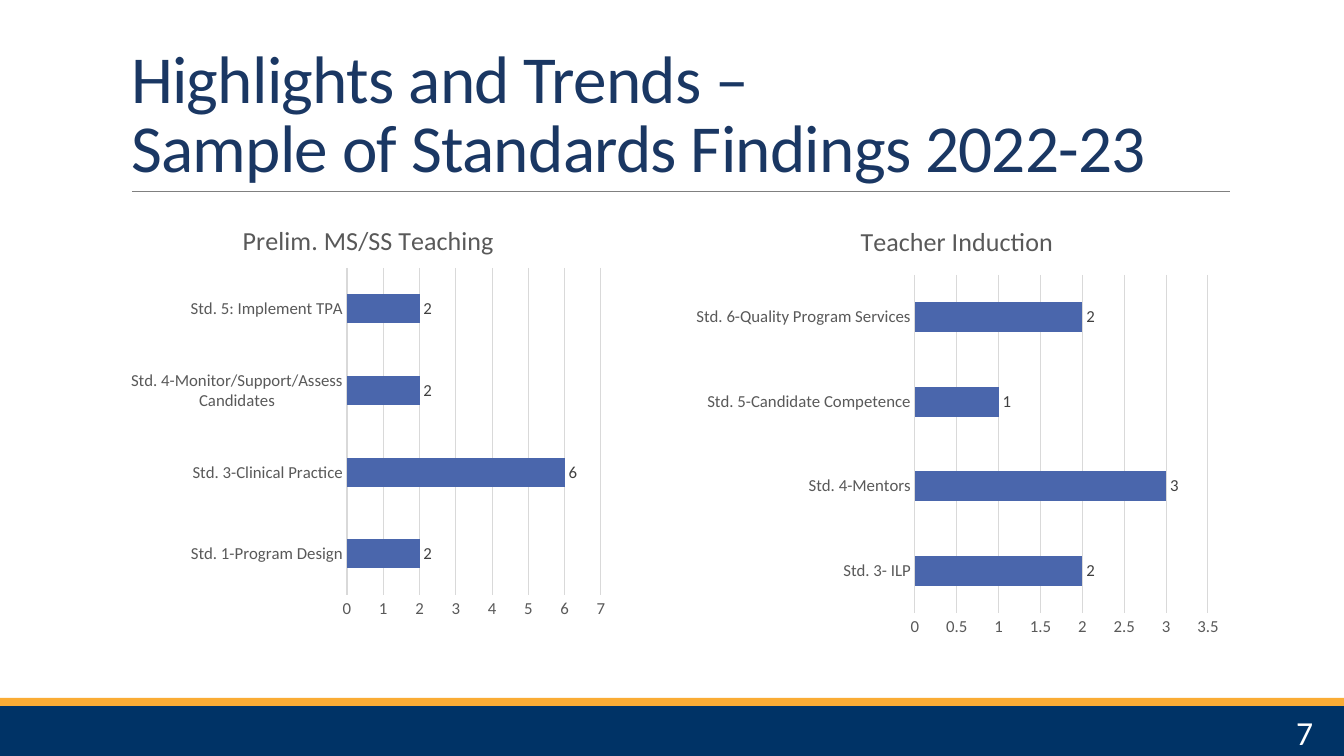
"""Build the slide on sample standards findings with two bar charts."""
from lxml import etree
from pptx import Presentation
from pptx import util as u
from pptx.chart.data import CategoryChartData
from pptx.dml.color import RGBColor
from pptx.enum import chart as ch, shapes, text
from pptx.oxml import parse_xml
from pptx.oxml.ns import nsdecls, qn

PX = 9144000 / 1008
FONT = "Calibri"
COLORS = {
    "navy": "003366", "gold": "FAAC35", "rule": "808080", "title": "1A3763",
    "bar": "4A66AC", "grid": "D9D9D9", "label": "595959", "value": "404040",
    "white": "FFFFFF",
}


def box(*lengths):
    return [u.Emu(round(length * PX)) for length in lengths]


def style(font, size, color):
    font.name, font.size, font.bold = FONT, u.Pt(size), False
    font.color.rgb = RGBColor.from_string(COLORS[color])


prs = Presentation()
prs.slide_width, prs.slide_height = box(1344, 756)
slide = prs.slides.add_slide(prs.slide_layouts[5])

for color, top, height in (("navy", 706, 50), ("gold", 698, 8)):
    band = slide.shapes.add_shape(
        shapes.MSO_SHAPE.RECTANGLE, *box(0, top, 1344, height))
    band.shadow.inherit = False
    band.fill.solid()
    band.fill.fore_color.rgb = RGBColor.from_string(COLORS[color])
    band.line.fill.background()

rule = slide.shapes.add_connector(
    shapes.MSO_CONNECTOR.STRAIGHT, *box(132, 191, 1230, 191))
rule.line.color.rgb = RGBColor.from_string(COLORS["rule"])
rule.line.width = u.Pt(0.5)
etree.SubElement(rule._element.spPr, qn("a:effectLst"))

heading = slide.shapes.title
heading.left, heading.top, heading.width, heading.height = box(121, 31, 1109, 160)
frame = heading.text_frame
frame.text = "Highlights and Trends – \vSample of Standards Findings 2022-23"
frame.word_wrap = True
frame.auto_size = text.MSO_AUTO_SIZE.NONE
frame.vertical_anchor = text.MSO_ANCHOR.BOTTOM
heading_line = frame.paragraphs[0]
heading_line.alignment = text.PP_ALIGN.LEFT
heading_line.line_spacing = 0.85
style(heading_line.font, 48, "title")
for run in heading_line.runs:
    run._r.get_or_add_rPr().set("spc", "-50")

findings = (
    ("Teacher Induction", "Teacher Induction", (685, 204, 544, 444),
     (915, 275, 293, 338), 3.5, 0.5,
     {"Std. 3- ILP": 2, "Std. 4-Mentors": 3, "Std. 5-Candidate Competence": 1,
      "Std. 6-Quality Program Services": 2}),
    ("Prelim. MS/SS Teaching", "Series 1", (121, 204, 495, 424),
     (347, 268, 254, 327), 7, 1,
     {"Std. 1-Program Design": 2, "Std. 3-Clinical Practice": 6,
      "Std. 4-Monitor/Support/Assess Candidates": 2,
      "Std. 5: Implement TPA": 2}),
)
for program, series_name, area, plot_area, maximum, step, counts in findings:
    data = CategoryChartData()
    data.categories = list(counts)
    data.add_series(series_name, list(counts.values()))
    chart = slide.shapes.add_chart(
        ch.XL_CHART_TYPE.BAR_CLUSTERED, *box(*area), data).chart
    chart.font.name, chart.font.size = FONT, u.Pt(10)
    chart.has_legend = False
    chart.has_title = True
    chart.chart_title.include_in_layout = False
    chart.chart_title.text_frame.text = program
    style(chart.chart_title.text_frame.paragraphs[0].font, 18.6, "label")

    plot = chart.plots[0]
    plot.gap_width = 182
    plot.vary_by_categories = False
    bars = plot.series[0].format.fill
    bars.solid()
    bars.fore_color.rgb = RGBColor.from_string(COLORS["bar"])
    plot.has_data_labels = True
    labels = plot.data_labels
    labels.show_value = True
    labels.position = ch.XL_LABEL_POSITION.OUTSIDE_END
    style(labels.font, 12, "value")

    standards, scale = chart.category_axis, chart.value_axis
    for axis in (standards, scale):
        axis.major_tick_mark = axis.minor_tick_mark = ch.XL_TICK_MARK.NONE
        style(axis.tick_labels.font, 12, "label")
    scale.has_major_gridlines = True
    for line in (standards.format.line, scale.major_gridlines.format.line):
        line.color.rgb = RGBColor.from_string(COLORS["grid"])
        line.width = u.Pt(0.75)
    scale.format.line.fill.background()
    scale.minimum_scale, scale.maximum_scale, scale.major_unit = 0, maximum, step

    left, top, width, height = area
    x, y, w, h = plot_area
    fractions = {"x": (x - left) / width, "y": (y - top) / height,
                 "w": w / width, "h": h / height}
    modes = '<c:layoutTarget val="inner"/><c:xMode val="edge"/><c:yMode val="edge"/>'
    places = "".join(f'<c:{key} val="{part:.4f}"/>' for key, part in fractions.items())
    plot_xml = chart._chartSpace.chart.plotArea
    for automatic in plot_xml.findall(qn("c:layout")):
        plot_xml.remove(automatic)
    plot_xml.insert(0, parse_xml(
        f'<c:layout {nsdecls("c")}><c:manualLayout>{modes}{places}'
        "</c:manualLayout></c:layout>"))

page = slide.shapes.add_textbox(*box(1179, 712, 144, 40)).text_frame
page.word_wrap = True
page.vertical_anchor = text.MSO_ANCHOR.MIDDLE
page.text = "7"
page.paragraphs[0].alignment = text.PP_ALIGN.RIGHT
style(page.paragraphs[0].font, 24, "white")

prs.save("out.pptx")
